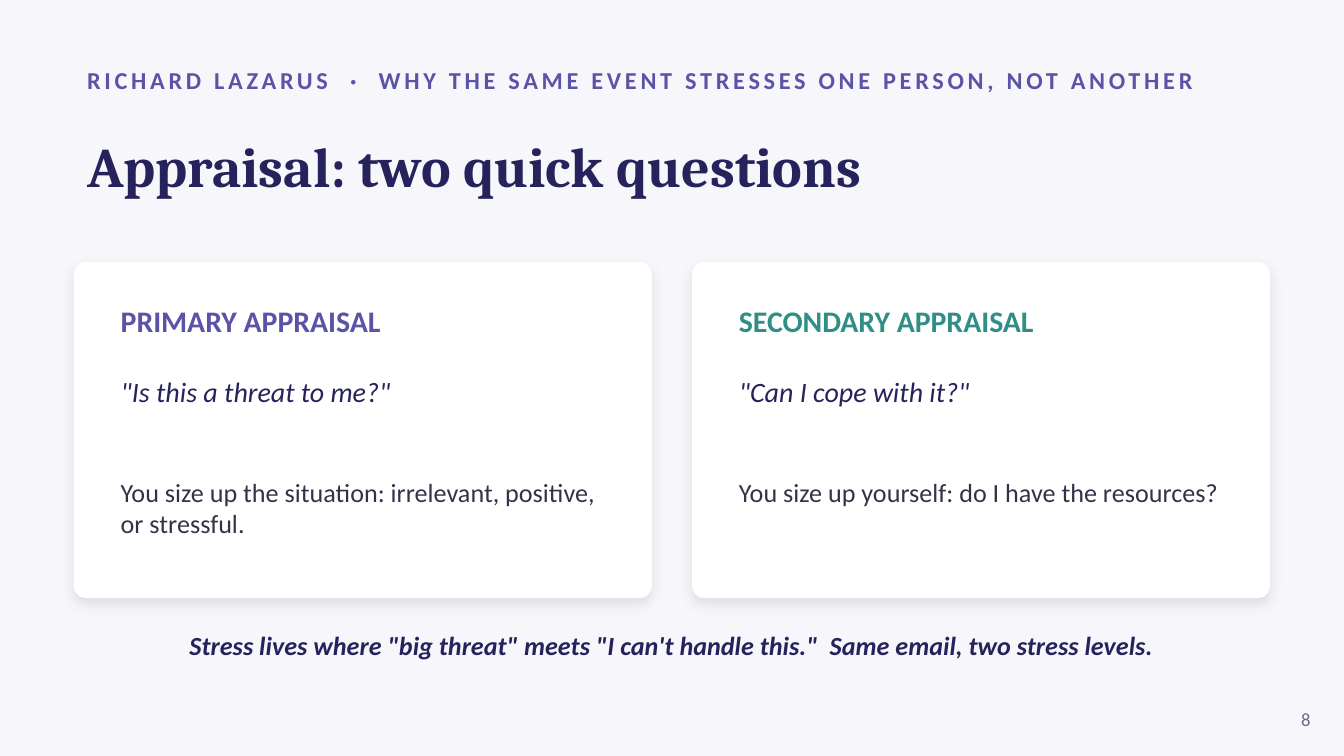
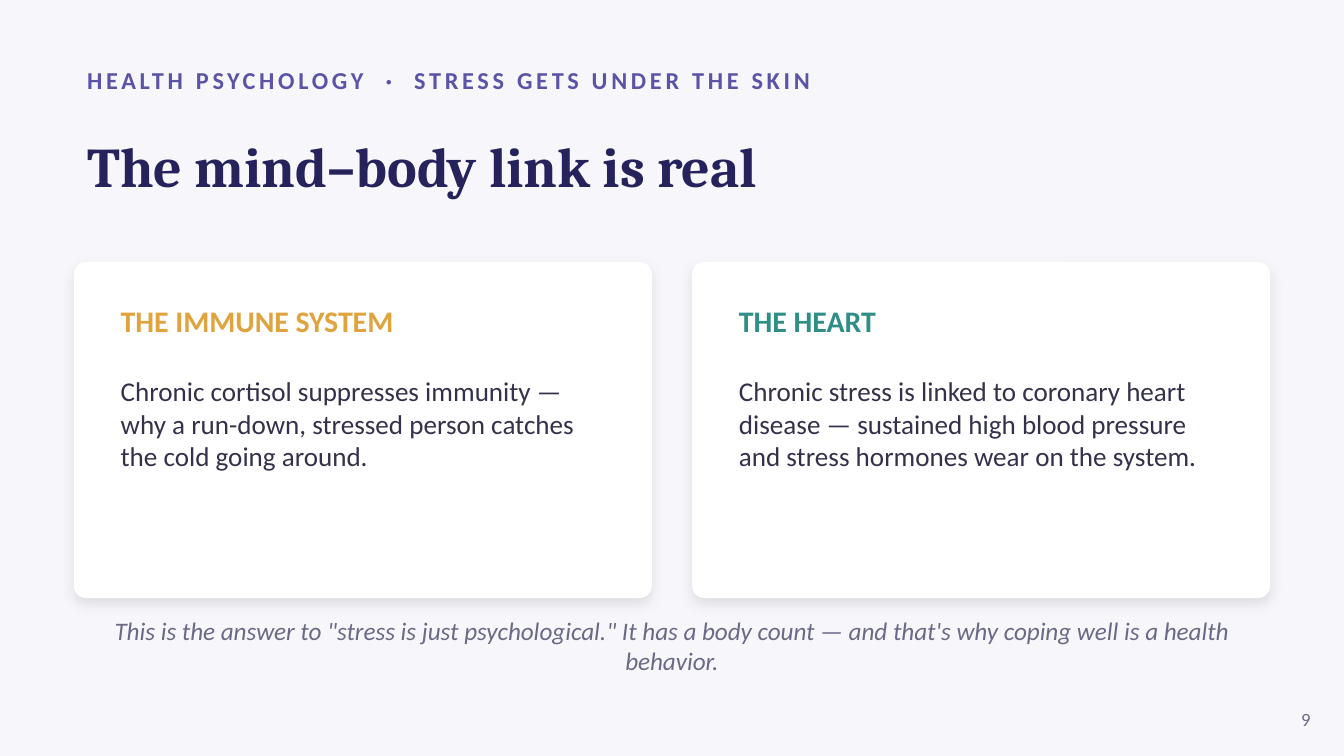
from dataclasses import dataclass

from lxml.etree import SubElement
from pptx import Presentation
from pptx.dml.color import RGBColor as RGB
from pptx.enum.shapes import MSO_SHAPE as SHAPE
from pptx.enum.text import MSO_ANCHOR as ANCHOR, MSO_AUTO_SIZE as AUTO_SIZE, PP_ALIGN as ALIGN
from pptx.oxml.ns import qn
from pptx.util import Inches, Pt


@dataclass(frozen=True)
class Theme:
    background: RGB = RGB.from_string("F7F7FB")
    card: RGB = RGB.from_string("FFFFFF")
    navy: RGB = RGB.from_string("26235C")
    violet: RGB = RGB.from_string("5B53A6")
    teal: RGB = RGB.from_string("2F8F86")
    amber: RGB = RGB.from_string("E0A33E")
    ink: RGB = RGB.from_string("33324A")
    muted: RGB = RGB.from_string("6B6A86")
    body_font: str = "Calibri"
    title_font: str = "Cambria"
    title_size: float = 30
    heading_size: float = 16
    quote_size: float = 15
    body_size: float = 14
    large_body_size: float = 14.5
    note_size: float = 13.5
    kicker_size: float = 13
    number_size: float = 10


theme = Theme()

MARGIN, CARD_TOP, CARD_WIDTH, CARD_HEIGHT, CARD_GAP = 0.55, 1.95, 4.3, 2.5, 0.3
CARD_PADDING = 0.25
CONTENT_WIDTH = 2 * CARD_WIDTH + CARD_GAP
FIRST_NUMBER = 8

quote = dict(size=theme.quote_size, color=theme.navy, italic=True, before=19.5)
after_quote = dict(size=theme.body_size, color=theme.ink, before=36.5)
after_heading = dict(size=theme.large_body_size, color=theme.ink, before=19.5)

SLIDES = [
    dict(
        kicker="RICHARD LAZARUS  ·  WHY THE SAME EVENT STRESSES ONE PERSON, NOT ANOTHER",
        title="Appraisal: two quick questions",
        cards=[
            ("PRIMARY APPRAISAL", theme.violet, [
                ('"Is this a threat to me?"', quote),
                ("You size up the situation: irrelevant, positive, or stressful.", after_quote),
            ]),
            ("SECONDARY APPRAISAL", theme.teal, [
                ('"Can I cope with it?"', quote),
                ("You size up yourself: do I have the resources?", after_quote),
            ]),
        ],
        takeaway='Stress lives where "big threat" meets "I can\'t handle this."'
                 "  Same email, two stress levels.",
        takeaway_style=dict(size=theme.body_size, color=theme.navy, bold=True, italic=True),
    ),
    dict(
        kicker="HEALTH PSYCHOLOGY  ·  STRESS GETS UNDER THE SKIN",
        title="The mind–body link is real",
        cards=[
            ("THE IMMUNE SYSTEM", theme.amber, [
                ("Chronic cortisol suppresses immunity — why a run-down, stressed person "
                 "catches the cold going around.", after_heading),
            ]),
            ("THE HEART", theme.teal, [
                ("Chronic stress is linked to coronary heart disease — sustained high blood "
                 "pressure and stress hormones wear on the system.", after_heading),
            ]),
        ],
        takeaway='This is the answer to "stress is just psychological." It has a body count '
                 "— and that's why coping well is a health behavior.",
        takeaway_style=dict(size=theme.note_size, color=theme.muted, italic=True),
    ),
]


def add_frame(slide, left, top, width, height, anchor=ANCHOR.MIDDLE):
    """Add a wrapping text box and return its text frame."""
    box = slide.shapes.add_textbox(Inches(left), Inches(top), Inches(width), Inches(height))
    frame = box.text_frame
    frame.word_wrap = True
    frame.vertical_anchor = anchor
    return frame


def write(paragraph, text, size, color, font=theme.body_font, bold=False, italic=False,
          align=ALIGN.LEFT, before=None):
    """Add one styled run to the paragraph and return it."""
    paragraph.alignment = align
    if before is not None:
        paragraph.space_before = Pt(before)
    run = paragraph.add_run()
    run.text = text
    run.font.name = font
    run.font.size = Pt(size)
    run.font.bold = bold
    run.font.italic = italic
    run.font.color.rgb = color
    return run


prs = Presentation()
prs.slide_width, prs.slide_height = Inches(10), Inches(5.625)
prs.slide_master.background.fill.solid()
prs.slide_master.background.fill.fore_color.rgb = theme.background
title_only = prs.slide_layouts.get_by_name("Title Only")

for number, content in enumerate(SLIDES, start=FIRST_NUMBER):
    slide = prs.slides.add_slide(title_only)

    kicker = add_frame(slide, MARGIN, 0.42, 9, 0.35)
    kicker_run = write(kicker.paragraphs[0], content["kicker"], theme.kicker_size,
                       theme.violet, bold=True)
    kicker_run.font._element.set("spc", "200")

    title = slide.shapes.title
    title.left, title.top = Inches(MARGIN), Inches(0.78)
    title.width, title.height = Inches(CONTENT_WIDTH), Inches(0.9)
    title.text_frame.auto_size = AUTO_SIZE.NONE
    title.text_frame.vertical_anchor = ANCHOR.MIDDLE
    write(title.text_frame.paragraphs[0], content["title"], theme.title_size, theme.navy,
          font=theme.title_font, bold=True)

    for column, (heading, accent, lines) in enumerate(content["cards"]):
        left = MARGIN + column * (CARD_WIDTH + CARD_GAP)
        card = slide.shapes.add_shape(SHAPE.ROUNDED_RECTANGLE, Inches(left), Inches(CARD_TOP),
                                      Inches(CARD_WIDTH), Inches(CARD_HEIGHT))
        card.adjustments[0] = 0.036
        card.fill.solid()
        card.fill.fore_color.rgb = theme.card
        card.line.fill.background()
        card.shadow.inherit = False
        effects = card.element.spPr.find(qn("a:effectLst"))
        shadow = SubElement(effects, qn("a:outerShdw"), blurRad=str(Pt(7)), dist=str(Pt(3)),
                            dir="5400000", algn="bl", rotWithShape="0")
        shadow_color = SubElement(shadow, qn("a:srgbClr"), val="000000")
        SubElement(shadow_color, qn("a:alpha"), val="10000")

        body = add_frame(slide, left + CARD_PADDING, CARD_TOP + CARD_PADDING,
                         CARD_WIDTH - 2 * CARD_PADDING, 2.1, ANCHOR.TOP)
        write(body.paragraphs[0], heading, theme.heading_size, accent, bold=True)
        for text, style in lines:
            write(body.add_paragraph(), text, **style)

    takeaway = add_frame(slide, MARGIN, 4.6, CONTENT_WIDTH, 0.4)
    write(takeaway.paragraphs[0], content["takeaway"], align=ALIGN.CENTER,
          **content["takeaway_style"])

    page = add_frame(slide, 9.35, 5.2, 0.5, 0.3)
    write(page.paragraphs[0], str(number), theme.number_size, theme.muted, align=ALIGN.RIGHT)

prs.save("out.pptx")
